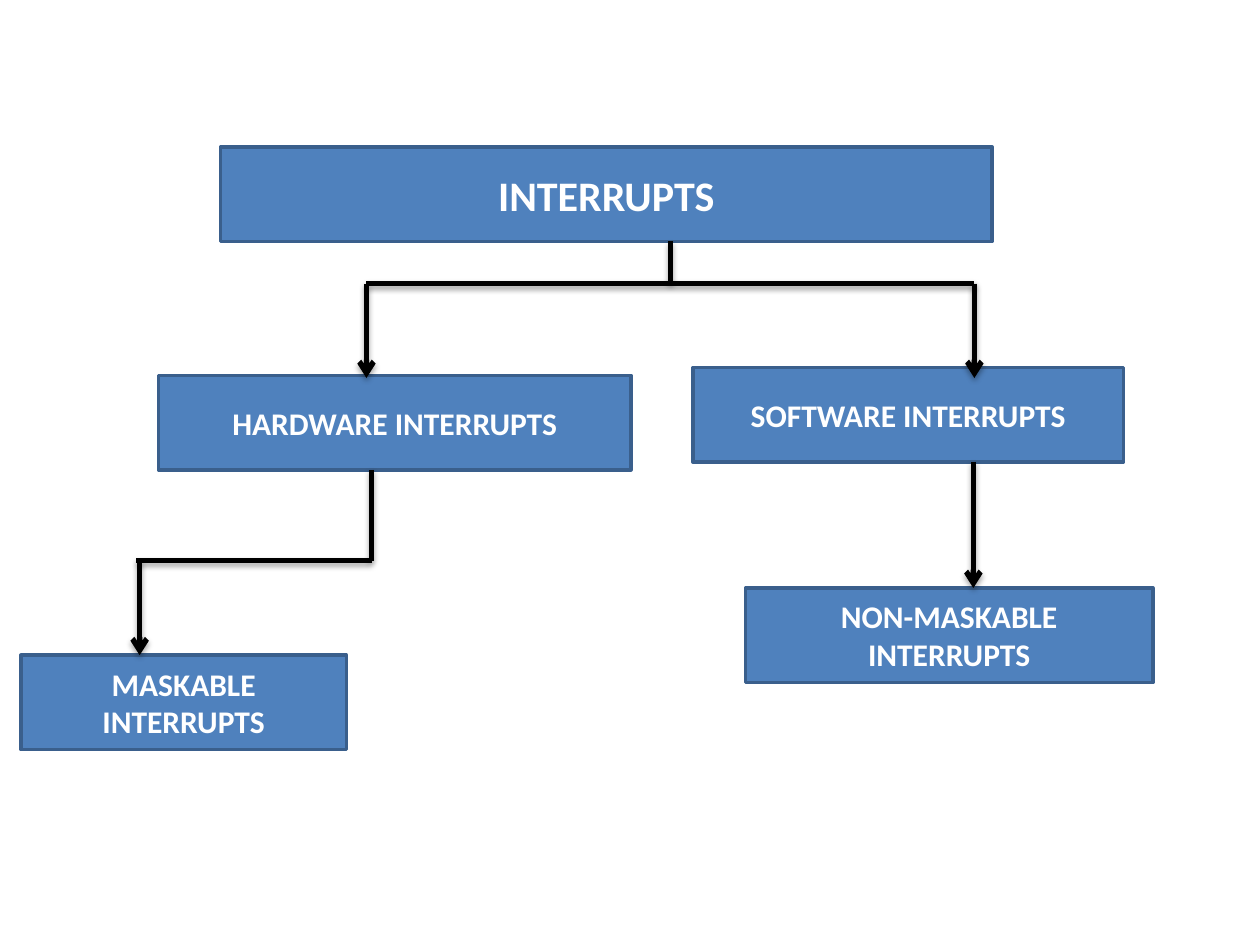
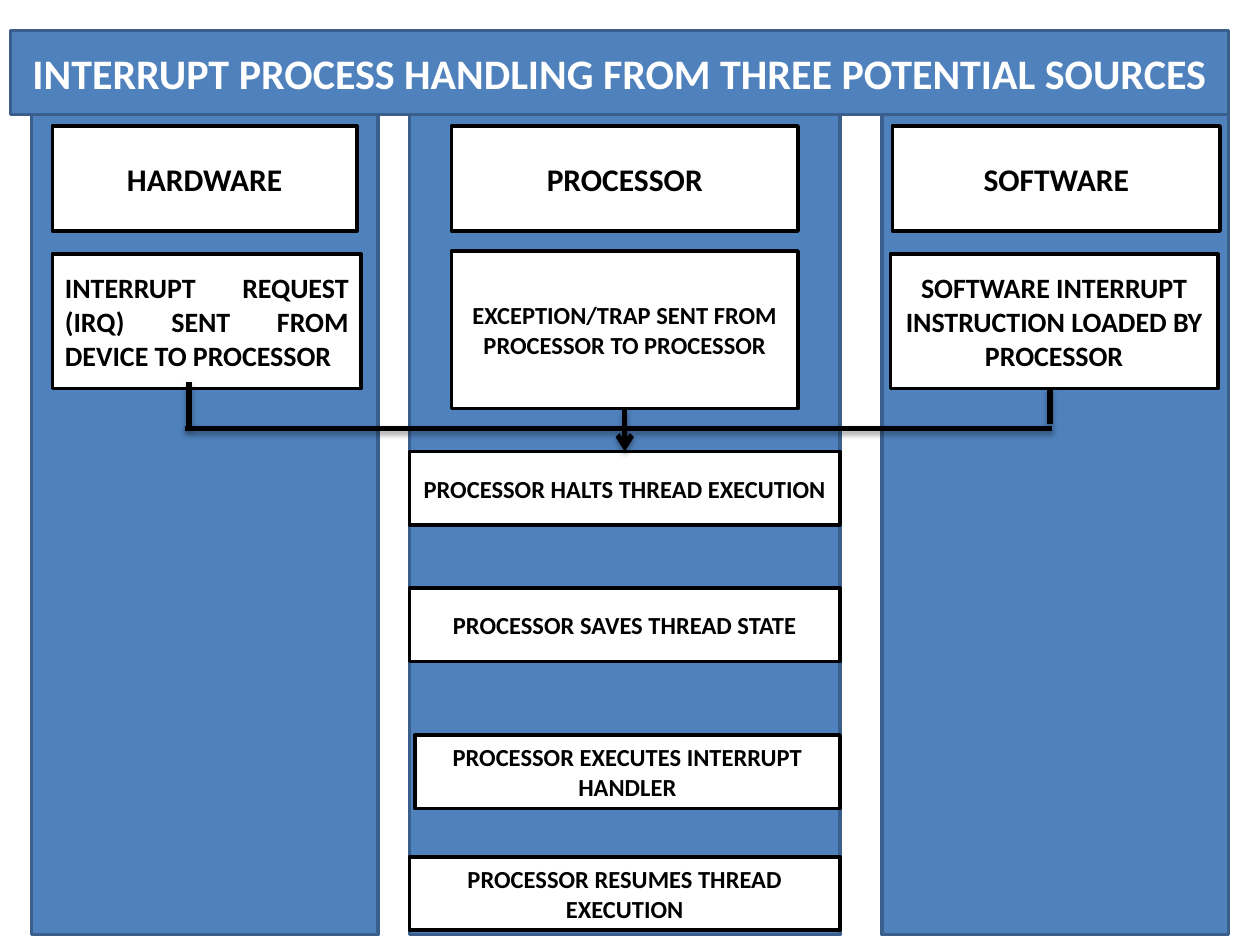
from pptx import Presentation
from pptx.dml.color import RGBColor as Rgb
from pptx.enum.shapes import MSO_CONNECTOR as Link, MSO_SHAPE as Shape
from pptx.enum.text import MSO_ANCHOR as Anchor, PP_ALIGN as Align
from pptx.oxml import parse_xml
from pptx.oxml.ns import nsdecls
from pptx.util import Inches, Pt

HUES = {"blue": "4F81BD", "edge": "3A5F8C", "ink": "000000", "paper": "FFFFFF"}
# Box looks: fill, outline, text
SOLID = ("blue", "edge", "paper")
PLAIN = ("paper", "ink", "ink")
COLS, ROWS = 120, 90
SHADOW = (
    f'<a:effectLst {nsdecls("a")}>'
    '<a:outerShdw blurRad="40000" dist="23000" dir="5400000" rotWithShape="0">'
    '<a:srgbClr val="000000"><a:alpha val="35000"/></a:srgbClr>'
    '</a:outerShdw></a:effectLst>'
)
HEAD = f'<a:tailEnd {nsdecls("a")} type="arrow"/>'


def hue(name):
    return Rgb.from_string(HUES[name])


class Deck:
    """Style, grid and current slide."""

    font = "Calibri"

    def __init__(self):
        self.prs = Presentation()
        self.prs.slide_width, self.prs.slide_height = Inches(10), Inches(7.5)
        self.slide = None

    def page(self):
        self.slide = self.prs.slides.add_slide(self.prs.slide_layouts[6])

    def x(self, col):
        return round(self.prs.slide_width * col / COLS)

    def y(self, row):
        return round(self.prs.slide_height * row / ROWS)

    def box(self, col, row, wide, high, text="", size=18, look=SOLID,
            align=Align.CENTER):
        fill, edge, ink = look
        box = self.slide.shapes.add_shape(
            Shape.RECTANGLE, self.x(col), self.y(row), self.x(wide), self.y(high))
        box.shadow.inherit = False
        box.fill.solid()
        box.fill.fore_color.rgb = hue(fill)
        box.line.color.rgb = hue(edge)
        box.line.width = Pt(2)
        if text:
            frame = box.text_frame
            frame.word_wrap = True
            frame.vertical_anchor = Anchor.MIDDLE
            para = frame.paragraphs[0]
            para.alignment = align
            run = para.add_run()
            run.text = text
            run.font.name, run.font.size, run.font.bold = self.font, Pt(size), True
            run.font.color.rgb = hue(ink)

    def line(self, start, end, arrow=False):
        (x1, y1), (x2, y2) = start, end
        line = self.slide.shapes.add_connector(
            Link.STRAIGHT, self.x(x1), self.y(y1), self.x(x2), self.y(y2))
        line.line.color.rgb = hue("ink")
        line.line.width = Pt(3)
        if arrow:
            line.line._get_or_add_ln().append(parse_xml(HEAD))
        line._element.spPr.append(parse_xml(SHADOW))

    def drop(self, col, top, end, arrow=False):
        self.line((col, top), (col, end), arrow)

    def bar(self, left, right, row):
        self.line((left, row), (right, row))


def tree(deck):
    deck.page()
    # Kinds of interrupt
    high = 9
    deck.box(21, 14, 73.5, high, "INTERRUPTS", 24)
    for col, row, wide, text in (
        (15.1, 35.75, 45, "HARDWARE INTERRUPTS"),
        (66, 35, 41, "SOFTWARE INTERRUPTS"),
        (2, 62.4, 31, "MASKABLE INTERRUPTS"),
        (71, 56, 38.8, "NON-MASKABLE INTERRUPTS"),
    ):
        deck.box(col, row, wide, high, text)
    # Root to hardware and software
    left, right, fork = 34.9, 92.8, 27
    deck.bar(left, right, fork)
    for col in (left, right):
        deck.drop(col, fork, 36, arrow=True)
    deck.drop((left + right) / 2, 14 + high, fork)
    # Hardware to maskable, software to non-maskable
    bend = 53.4
    deck.drop(35.4, 35.75 + high, bend)
    deck.drop(13.3, bend, 62.4, arrow=True)
    deck.drop(92.7, 35 + high, 56, arrow=True)
    deck.bar(13, 35.4, bend)


def flow(deck):
    deck.page()
    # Title band and three lanes
    deck.box(1, 2.9, 116, 8,
             "INTERRUPT PROCESS HANDLING FROM THREE POTENTIAL SOURCES", 24)
    for col, wide in ((3, 33), (84, 33), (39, 41)):
        deck.box(col, 10.9, wide, 78.1)
    # Lane heads
    for col, wide, text in ((5, 29, "HARDWARE"), (85, 31.2, "SOFTWARE"),
                            (43, 33, "PROCESSOR")):
        deck.box(col, 12, wide, 10, text, look=PLAIN)
    # Sources
    deck.box(84.8, 24.2, 31.2, 12.8,
             "SOFTWARE INTERRUPT INSTRUCTION LOADED BY PROCESSOR", 16, PLAIN)
    deck.box(5, 24.2, 29.4, 12.8,
             "INTERRUPT REQUEST (IRQ) SENT FROM DEVICE TO PROCESSOR", 16, PLAIN,
             Align.JUSTIFY)
    deck.box(43, 23.9, 33, 15,
             "EXCEPTION/TRAP SENT FROM PROCESSOR TO PROCESSOR", 14, PLAIN)
    # Processor steps, flush with the right of the lane
    for row, wide, text in (
        (43, 41, "PROCESSOR HALTS THREAD EXECUTION"),
        (56, 41, "PROCESSOR SAVES THREAD STATE"),
        (70, 40.5, "PROCESSOR EXECUTES INTERRUPT HANDLER"),
        (81.6, 41, "PROCESSOR RESUMES THREAD EXECUTION"),
    ):
        deck.box(80 - wide, row, wide, 7, text, 14, PLAIN)
    # Sources join above the first step
    join = 40.8
    deck.drop(18, 36.4, join)
    deck.bar(17.6, 100.2, join)
    deck.drop(100, 37, 40.4)
    deck.drop(59.5, 38.9, 43, arrow=True)


def main():
    deck = Deck()
    tree(deck)
    flow(deck)
    deck.prs.save("out.pptx")


if __name__ == "__main__":
    main()
